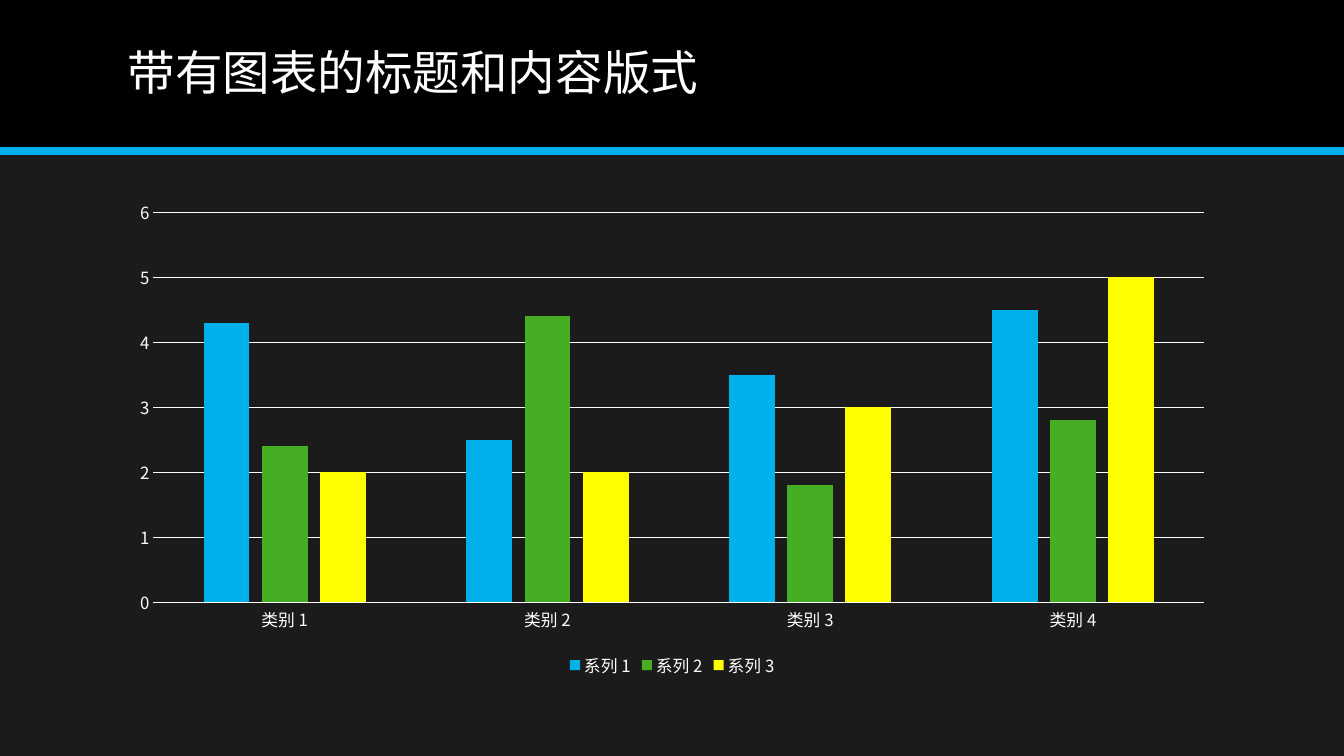
from dataclasses import dataclass

from lxml.etree import SubElement
from pptx import Presentation
from pptx.chart.data import CategoryChartData as ChartData
from pptx.dml.color import RGBColor
from pptx.enum.chart import XL_CHART_TYPE as ChartType
from pptx.enum.chart import XL_LEGEND_POSITION as LegendPos
from pptx.enum.chart import XL_TICK_MARK as Tick
from pptx.enum.shapes import MSO_CONNECTOR as Link
from pptx.enum.shapes import MSO_SHAPE as Shape
from pptx.enum.text import MSO_ANCHOR as Anchor
from pptx.oxml.ns import qn
from pptx.slide import Slide
from pptx.text.text import Font
from pptx.util import Cm, Pt

WIDTH, HEIGHT = 33.87, 19.05
BAND = 3.81
LEFT, SPAN = 2.97, 27.94
FACE = "Noto Sans CJK SC"
WHITE, BLACK, GREY, BLUE = "FFFFFF", "000000", "1B1B1B", "00B0EA"


@dataclass
class Series:
    name: str
    color: str
    values: tuple[float, ...]


GROUPS = [f"类别 {n}" for n in range(1, 5)]
SERIES = [
    Series("系列 1", BLUE, (4.3, 2.5, 3.5, 4.5)),
    Series("系列 2", "45AE22", (2.4, 4.4, 1.8, 2.8)),
    Series("系列 3", "FFFF00", (2, 2, 3, 5)),
]


def paint(target, color: str) -> None:
    """Give a fill, a line's fill or a font's fill one solid colour."""
    target.solid()
    target.fore_color.rgb = RGBColor.from_string(color)


def style(font: Font, size: float) -> None:
    font.size = Pt(size)
    paint(font.fill, WHITE)
    font.name = FACE
    SubElement(font._rPr, qn("a:ea")).set("typeface", FACE)


def draw_band(slide: Slide) -> None:
    band = slide.shapes.add_shape(Shape.RECTANGLE, 0, 0, Cm(WIDTH), Cm(BAND))
    band.shadow.inherit = False
    paint(band.fill, BLACK)
    band.line.fill.background()
    rule = slide.shapes.add_connector(
        Link.STRAIGHT, 0, Cm(BAND), Cm(WIDTH), Cm(BAND))
    paint(rule.line.fill, BLUE)
    rule.line.width = Pt(6)
    SubElement(rule._element.spPr, qn("a:effectLst"))


def draw_title(slide: Slide, text: str) -> None:
    box = slide.shapes.add_textbox(Cm(LEFT), Cm(0.36), Cm(SPAN), Cm(3.05))
    frame = box.text_frame
    frame.word_wrap = True
    frame.vertical_anchor = Anchor.MIDDLE
    line = frame.paragraphs[0]
    line.text = text
    line.line_spacing = 0.9
    style(line.font, 34)


def draw_chart(slide: Slide) -> None:
    data = ChartData()
    data.categories = GROUPS
    for item in SERIES:
        data.add_series(item.name, item.values)
    chart = slide.shapes.add_chart(
        ChartType.COLUMN_CLUSTERED,
        Cm(LEFT), Cm(4.78), Cm(SPAN), Cm(12.4), data).chart
    chart.has_title = False
    chart.font.name = "Arial"
    chart.font.size = Pt(10)
    paint(chart.font.fill, WHITE)

    # Columns
    plot = chart.plots[0]
    plot.vary_by_categories = False
    plot.gap_width, plot.overlap = 219, -27
    for bars, item in zip(plot.series, SERIES):
        paint(bars.format.fill, item.color)

    # Axes and grid
    base, scale = chart.category_axis, chart.value_axis
    for axis in (base, scale):
        axis.major_tick_mark = axis.minor_tick_mark = Tick.NONE
        style(axis.tick_labels.font, 12)
    scale.minimum_scale, scale.maximum_scale, scale.major_unit = 0, 6, 1
    scale.format.line.fill.background()
    for line in (base.format.line, scale.major_gridlines.format.line):
        paint(line.fill, WHITE)
        line.width = Pt(0.75)

    # Legend
    chart.has_legend = True
    chart.legend.position = LegendPos.BOTTOM
    chart.legend.include_in_layout = False
    style(chart.legend.font, 12)


def main() -> None:
    deck = Presentation()
    deck.slide_width, deck.slide_height = Cm(WIDTH), Cm(HEIGHT)
    slide = deck.slides.add_slide(deck.slide_layouts[6])
    paint(slide.background.fill, GREY)
    draw_band(slide)
    draw_title(slide, "带有图表的标题和内容版式")
    draw_chart(slide)
    deck.save("out.pptx")


if __name__ == "__main__":
    main()
